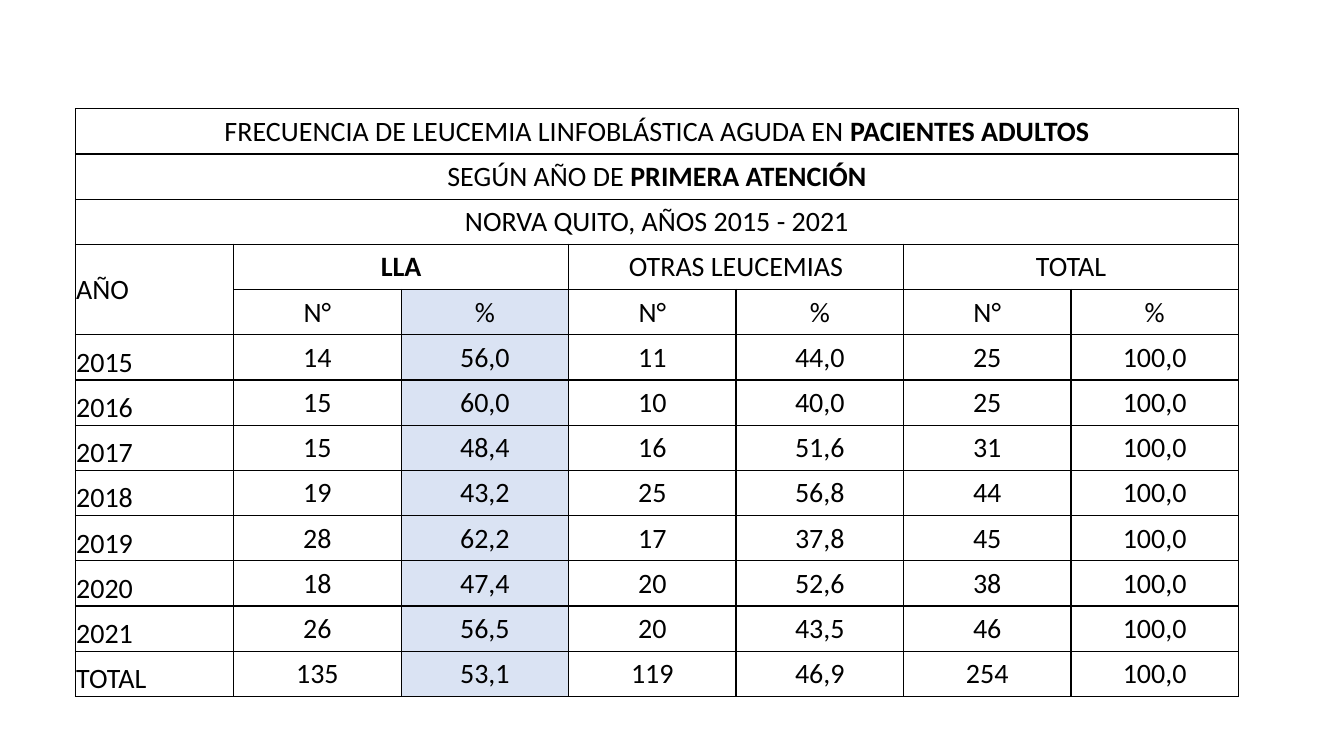
from pptx import Presentation
from pptx import util as u
from pptx.dml import color
from pptx.enum import text
from pptx.oxml import parse_xml
from pptx.oxml import ns

HEADINGS = [
    [("FRECUENCIA DE LEUCEMIA LINFOBLÁSTICA AGUDA EN ", False), ("PACIENTES ADULTOS", True)],
    [("SEGÚN AÑO DE ", False), ("PRIMERA ATENCIÓN", True)],
    [("NORVA QUITO, AÑOS 2015 - 2021", False)],
]
GROUPS = [("LLA", True), ("OTRAS LEUCEMIAS", False), ("TOTAL", False)]
FREQUENCIES = [
    ("2015", "14", "56,0", "11", "44,0", "25", "100,0"),
    ("2016", "15", "60,0", "10", "40,0", "25", "100,0"),
    ("2017", "15", "48,4", "16", "51,6", "31", "100,0"),
    ("2018", "19", "43,2", "25", "56,8", "44", "100,0"),
    ("2019", "28", "62,2", "17", "37,8", "45", "100,0"),
    ("2020", "18", "47,4", "20", "52,6", "38", "100,0"),
    ("2021", "26", "56,5", "20", "43,5", "46", "100,0"),
    ("TOTAL", "135", "53,1", "119", "46,9", "254", "100,0"),
]
GROUP_ROW = len(HEADINGS)
UNIT_ROW = GROUP_ROW + 1
FIRST_YEAR_ROW = UNIT_ROW + 1
COLUMN_WIDTHS = [3.99] + [4.22] * 6
ROW_HEIGHTS = [1.14] * (FIRST_YEAR_ROW + len(FREQUENCIES))


def rgb(value):
    return color.RGBColor.from_string(value)


def add_text(p, content, font="Calibri", size=20, bold=False, fill="000000"):
    r = p.add_run()
    r.text = content
    r.font.name = font
    r.font.size = u.Pt(size)
    r.font.bold = bold
    r.font.color.rgb = rgb(fill)


class TableSlide:
    ink = "000000"
    paper = "FFFFFF"
    highlight = "DAE3F3"
    border = u.Pt(1)
    inset = u.Cm(0.02)

    def __init__(self, prs):
        self.s = prs.slides.add_slide(prs.slide_layouts[6])

    def table(self, left, top, widths, heights):
        frame = self.s.shapes.add_table(
            len(heights), len(widths), u.Cm(left), u.Cm(top),
            u.Cm(sum(widths)), u.Cm(sum(heights)))
        self.grid = frame.table
        self.grid.first_row = self.grid.horz_banding = False
        for column, width in zip(self.grid.columns, widths):
            column.width = u.Cm(width)
        for row, height in zip(self.grid.rows, heights):
            row.height = u.Cm(height)
        for cell in self.grid.iter_cells():
            self.style_cell(cell)

    def style_cell(self, cell):
        tc_pr = cell._tc.get_or_add_tcPr()
        for side in ("lnL", "lnR", "lnT", "lnB"):
            tc_pr.append(parse_xml(
                f'<a:{side} {ns.nsdecls("a")} w="{self.border}"><a:solidFill>'
                f'<a:srgbClr val="{self.ink}"/></a:solidFill></a:{side}>'))
        self.fill_cell(cell, self.paper)
        cell.margin_left = cell.margin_right = cell.margin_top = self.inset
        cell.margin_bottom = 0

    def fill_cell(self, cell, fill):
        cell.fill.solid()
        cell.fill.fore_color.rgb = rgb(fill)

    def cell(self, row, col, runs, rows=1, cols=1, align="CENTER", anchor="MIDDLE"):
        cell = self.grid.cell(row, col)
        if rows > 1 or cols > 1:
            cell.merge(self.grid.cell(row + rows - 1, col + cols - 1))
        cell.vertical_anchor = text.MSO_ANCHOR[anchor]
        p = cell.text_frame.paragraphs[0]
        p.alignment = text.PP_ALIGN[align]
        for content, bold in runs:
            add_text(p, content, bold=bold, fill=self.ink)

    def highlight_column(self, col, first_row):
        for row in range(first_row, len(self.grid.rows)):
            self.fill_cell(self.grid.cell(row, col), self.highlight)


def main():
    prs = Presentation()
    prs.slide_width, prs.slide_height = u.Cm(33.87), u.Cm(19.05)
    slide = TableSlide(prs)
    slide.table(1.9, 2.74, COLUMN_WIDTHS, ROW_HEIGHTS)

    for row, runs in enumerate(HEADINGS):
        slide.cell(row, 0, runs, cols=len(COLUMN_WIDTHS))

    slide.cell(GROUP_ROW, 0, [("AÑO", False)], rows=2, align="LEFT")
    for i, group in enumerate(GROUPS):
        col = 1 + 2 * i
        slide.cell(GROUP_ROW, col, [group], cols=2)
        slide.cell(UNIT_ROW, col, [("N°", False)])
        slide.cell(UNIT_ROW, col + 1, [("%", False)])

    for row, (year, *values) in enumerate(FREQUENCIES, FIRST_YEAR_ROW):
        slide.cell(row, 0, [(year, False)], align="LEFT", anchor="BOTTOM")
        for col, value in enumerate(values, 1):
            slide.cell(row, col, [(value, False)])

    slide.highlight_column(2, UNIT_ROW)
    prs.save("out.pptx")


if __name__ == "__main__":
    main()
